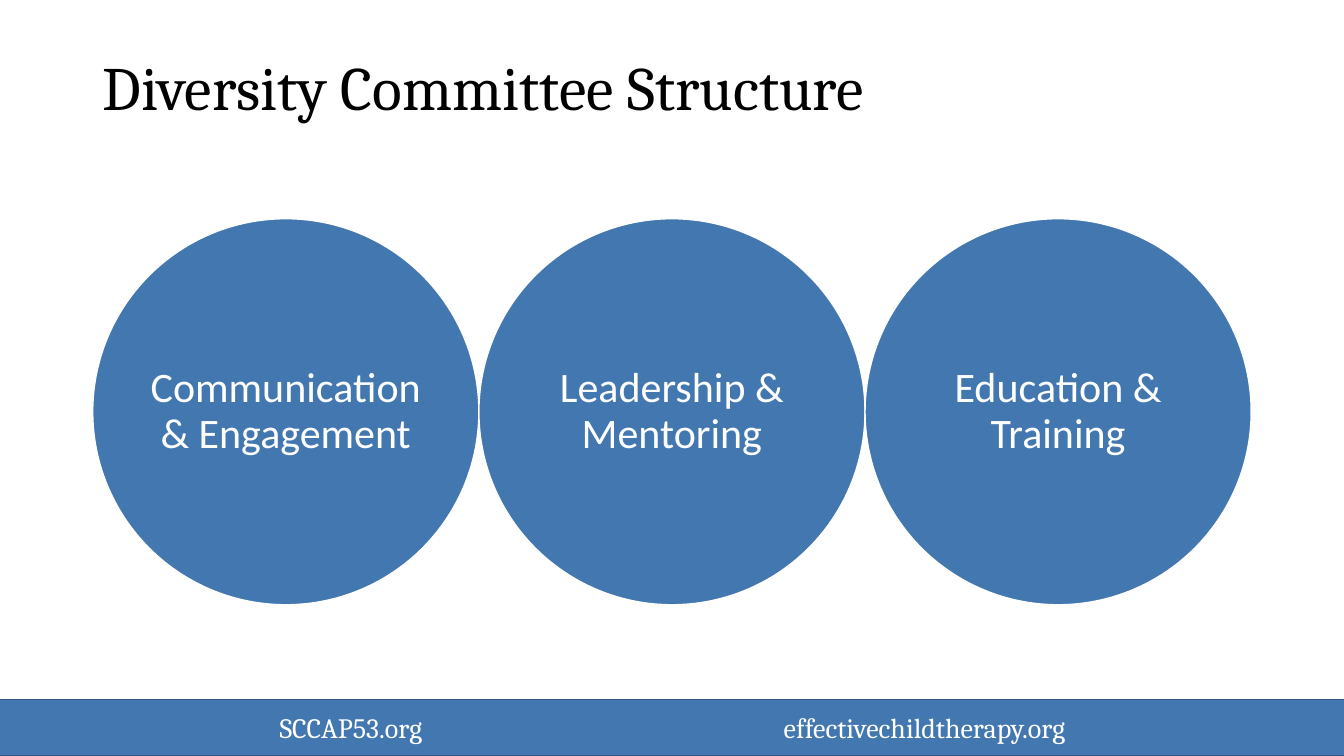
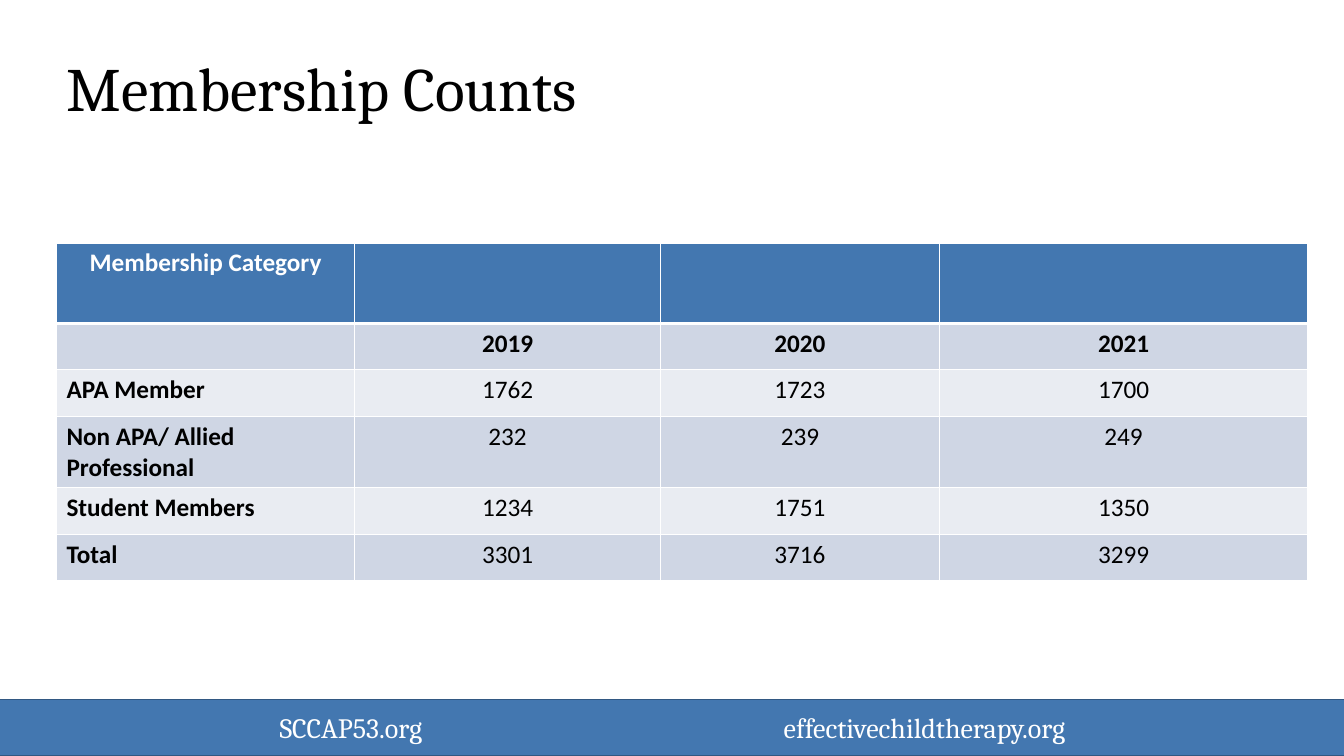
from lxml import etree
from pptx import Presentation
from pptx.dml.color import RGBColor
from pptx.enum.shapes import MSO_SHAPE
from pptx.enum.text import MSO_ANCHOR, MSO_AUTO_SIZE, PP_ALIGN
from pptx.oxml.ns import qn
from pptx.util import Pt

RECTANGLE, OVAL = MSO_SHAPE.RECTANGLE, MSO_SHAPE.OVAL
MIDDLE, NO_FIT = MSO_ANCHOR.MIDDLE, MSO_AUTO_SIZE.NONE
LEFT, CENTER = PP_ALIGN.LEFT, PP_ALIGN.CENTER

EMU_PER_PX = 9144  # 100 px to the inch
SLIDE_WIDTH, SLIDE_HEIGHT = 1333, 750
TITLE_ONLY = 5

BLUE, DARK_BLUE = "4377B0", "325882"
WHITE, BLACK = "FFFFFF", "000000"
BAND_DARK, BAND_LIGHT = "CFD6E4", "E9ECF2"
HEADING_FONT, BODY_FONT = "Cambria", "Calibri"

COMMITTEES = ["Communication & Engagement", "Leadership & Mentoring", "Education & Training"]
COLUMN_WIDTHS = [296, 303, 277, 365]
ROW_HEIGHTS = [80, 46, 46, 71, 46, 46]
MEMBERSHIP = [
    ["Membership Category", "", "", ""],
    ["", "2019", "2020", "2021"],
    ["APA Member", "1762", "1723", "1700"],
    ["Non APA/ Allied Professional", "232", "239", "249"],
    ["Student Members", "1234", "1751", "1350"],
    ["Total", "3301", "3716", "3299"],
]


def px(length):
    return length * EMU_PER_PX


def color(hex_string):
    return RGBColor.from_string(hex_string)


def style_paragraph(para, font, size, hex_color, align, bold=False):
    para.alignment = align
    para.font.name = font
    para.font.size = Pt(size)
    para.font.color.rgb = color(hex_color)
    para.font.bold = bold


def add_filled_shape(slide, kind, left, top, width, height, line):
    shape = slide.shapes.add_shape(kind, px(left), px(top), px(width), px(height))
    shape.shadow.inherit = False
    shape.fill.solid()
    shape.fill.fore_color.rgb = color(BLUE)
    shape.line.color.rgb = color(line)
    shape.line.width = Pt(1)
    frame = shape.text_frame
    frame.word_wrap = True
    frame.vertical_anchor = MIDDLE
    return shape


def set_tab_stop(para, position):
    tabs = etree.SubElement(para._p.get_or_add_pPr(), qn("a:tabLst"))
    etree.SubElement(tabs, qn("a:tab"), pos=str(px(position)), algn="l")


def move_footer_to_layout(slide):
    """Draw the footer band and hand it to the layout, so every slide shows it."""
    band = add_filled_shape(slide, RECTANGLE, -3, 694, 1340, 56, DARK_BLUE)
    para = band.text_frame.paragraphs[0]
    para.text = "SCCAP53.org\teffectivechildtherapy.org"
    set_tab_stop(para, 500)
    style_paragraph(para, HEADING_FONT, 20, WHITE, CENTER)
    slide.slide_layout.shapes.element.append(band.element)


def add_titled_slide(deck, text, left, top):
    slide = deck.slides.add_slide(deck.slide_layouts[TITLE_ONLY])
    title = slide.shapes.title
    title.left, title.top, title.width, title.height = px(left), px(top), px(1050), px(100)
    frame = title.text_frame
    frame.text = text
    frame.word_wrap = True
    frame.auto_size = NO_FIT
    frame.vertical_anchor = MIDDLE
    para = frame.paragraphs[0]
    para.line_spacing = 0.9
    style_paragraph(para, HEADING_FONT, 44, BLACK, LEFT)
    return slide


def add_circle_row(slide, labels, left, top, diameter):
    for index, label in enumerate(labels):
        circle = add_filled_shape(slide, OVAL, left + index * diameter, top,
                                  diameter, diameter, WHITE)
        frame = circle.text_frame
        frame.margin_left = frame.margin_right = frame.margin_top = frame.margin_bottom = 0
        para = frame.paragraphs[0]
        para.text = label
        para.line_spacing = 0.9
        style_paragraph(para, BODY_FONT, 30, WHITE, CENTER)


def set_cell_border(cell, side, points):
    line = etree.SubElement(cell._tc.get_or_add_tcPr(), qn(f"a:ln{side}"), w=str(Pt(points)))
    fill = etree.SubElement(line, qn("a:solidFill"))
    etree.SubElement(fill, qn("a:srgbClr"), val=WHITE)


def format_cell(cell, row, column):
    is_header = row == 0
    for side in "LRTB":
        beside_header_rule = (row, side) in [(0, "B"), (1, "T")]
        set_cell_border(cell, side, 3 if beside_header_rule else 1)
    cell.fill.solid()
    band = BAND_DARK if row % 2 else BAND_LIGHT
    cell.fill.fore_color.rgb = color(BLUE if is_header else band)
    style_paragraph(cell.text_frame.paragraphs[0], BODY_FONT, 18,
                    WHITE if is_header else BLACK,
                    LEFT if column == 0 and not is_header else CENTER,
                    bold=row < 2 or column == 0)


def add_membership_table(slide, left, top):
    frame = slide.shapes.add_table(len(ROW_HEIGHTS), len(COLUMN_WIDTHS), px(left), px(top),
                                   px(sum(COLUMN_WIDTHS)), px(sum(ROW_HEIGHTS)))
    table = frame.table
    for column, width in zip(table.columns, COLUMN_WIDTHS):
        column.width = px(width)
    for row, height in zip(table.rows, ROW_HEIGHTS):
        row.height = px(height)
    for row, values in enumerate(MEMBERSHIP):
        for column, value in enumerate(values):
            cell = table.cell(row, column)
            cell.text = value
            format_cell(cell, row, column)


def main():
    deck = Presentation()
    deck.slide_width, deck.slide_height = px(SLIDE_WIDTH), px(SLIDE_HEIGHT)

    structure = add_titled_slide(deck, "Diversity Committee Structure", 92, 40)
    move_footer_to_layout(structure)
    add_circle_row(structure, COMMITTEES, 92, 217, 383)

    counts = add_titled_slide(deck, "Membership Counts", 56, 41)
    add_membership_table(counts, 56, 241)

    deck.save("out.pptx")


if __name__ == "__main__":
    main()
